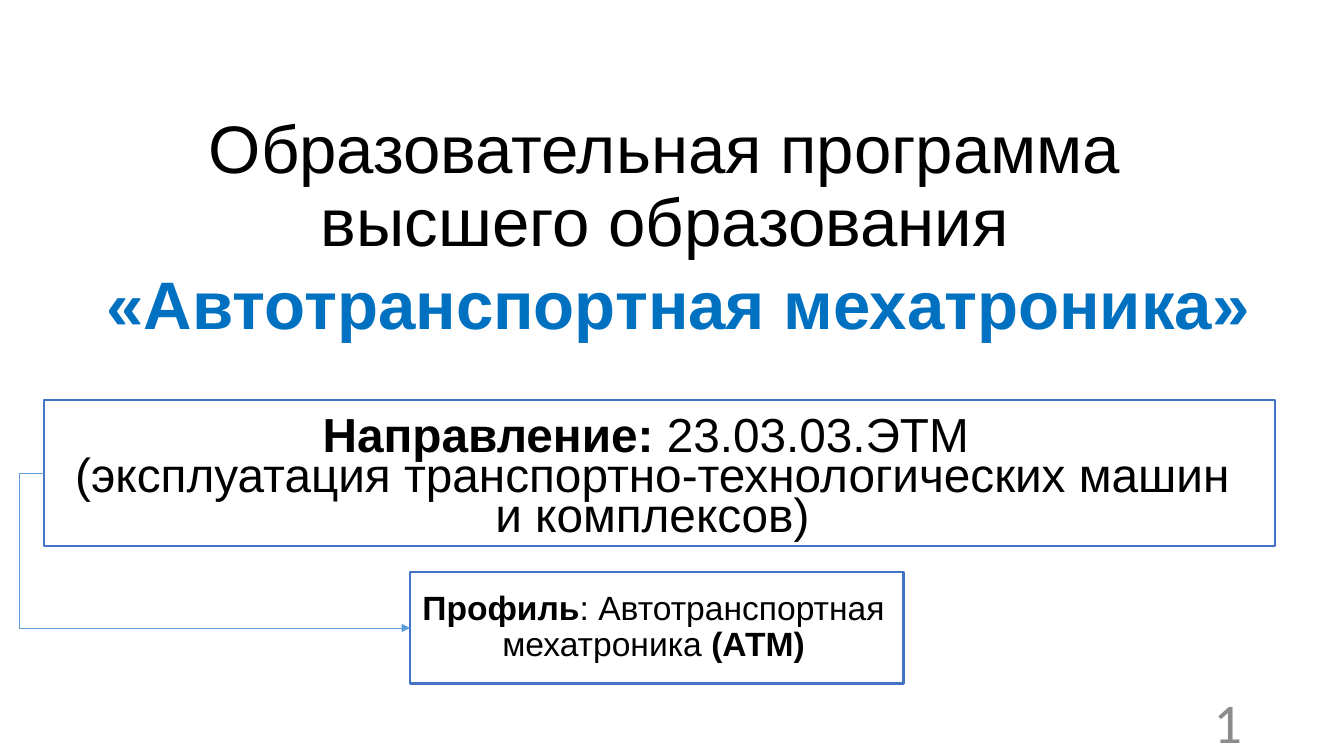
from lxml import etree
from pptx import Presentation
from pptx.dml.color import RGBColor
from pptx.enum.shapes import MSO_CONNECTOR, MSO_SHAPE
from pptx.enum.text import MSO_ANCHOR, PP_ALIGN
from pptx.oxml.ns import qn
from pptx.util import Pt

TOP, MIDDLE, BOTTOM = MSO_ANCHOR.TOP, MSO_ANCHOR.MIDDLE, MSO_ANCHOR.BOTTOM
CENTER, RIGHT = PP_ALIGN.CENTER, PP_ALIGN.RIGHT
RECTANGLE, ELBOW = MSO_SHAPE.RECTANGLE, MSO_CONNECTOR.ELBOW

THEME = {
    "black": "000000", "blue": "0070C0", "grey": "8C8C8C",
    "frame": "4472C4", "arrow": "5B9BD5",
    "heading": 48, "direction": 34.1, "profile": 24, "number": 40,
    "font": "Arial", "number_font": "Calibri",
}

TEXTS = [
    {"box": (77, 78, 1176, 188), "anchor": BOTTOM, "size": "heading",
     "format": {"line_spacing": 0.9},
     "paragraphs": [[("Образовательная программа\vвысшего образования", False)]]},
    {"box": (65, 266, 1227, 94), "anchor": TOP, "size": "heading", "color": "blue",
     "format": {"line_spacing": 0.9, "space_before": Pt(10)},
     "paragraphs": [[("«Автотранспортная мехатроника»", True)]]},
    {"box": (950, 701, 302, 40), "anchor": MIDDLE, "size": "number", "color": "grey",
     "font": "number_font", "format": {"alignment": RIGHT},
     "paragraphs": [[("1", False)]]},
    {"box": (51, 413, 1203, 135), "anchor": MIDDLE, "size": "direction",
     "format": {"line_spacing": 0.7},
     "paragraphs": [
         [("Направление:", True), (" 23.03.03.ЭТМ ", False)],
         [("(эксплуатация транспортно-технологических машин и комплексов)", False)]]},
    {"box": (402, 586, 503, 83), "anchor": MIDDLE, "size": "profile",
     "format": {"line_spacing": 0.9},
     "paragraphs": [[("Профиль", True), (": Автотранспортная мехатроника ", False),
                     ("(АТМ)", True)]]},
]

DIRECTION_FRAME = (44, 400, 1231, 146)
PROFILE_FRAME = (410, 572, 494, 112)
FRAMES = [(DIRECTION_FRAME, 1.75), (PROFILE_FRAME, 2)]
ARROW_OUTSET = 25
ARROW_WIDTH = 0.5
SCALE = 914400 / 100.8


def emu(*lengths):
    return [round(length * SCALE) for length in lengths]


def color(name):
    return RGBColor.from_string(THEME[name])


def add_text(slide, item):
    frame = slide.shapes.add_textbox(*emu(*item["box"])).text_frame
    frame.word_wrap = True
    frame.vertical_anchor = item["anchor"]
    for index, runs in enumerate(item["paragraphs"]):
        paragraph = frame.paragraphs[0] if index == 0 else frame.add_paragraph()
        for name, value in {"alignment": CENTER, **item["format"]}.items():
            setattr(paragraph, name, value)
        for part, (words, bold) in enumerate(runs):
            for line_index, line in enumerate(words.split("\v")):
                if line_index:
                    paragraph.add_line_break()
                run = paragraph.add_run()
                run.text = line
                font = {"name": THEME[item.get("font", "font")],
                        "size": Pt(THEME[item["size"]]), "bold": bold}
                for name, value in font.items():
                    setattr(run.font, name, value)
                run.font.color.rgb = color(item.get("color", "black"))


def add_frame(slide, box, width):
    frame = slide.shapes.add_shape(RECTANGLE, *emu(*box))
    frame.shadow.inherit = False
    frame.fill.background()
    frame.line.color.rgb = color("frame")
    frame.line.width = Pt(width)


def add_arrow(slide, source, target):
    start = (source[0], source[1] + source[3] / 2)
    end = (target[0], target[1] + target[3] / 2)
    arrow = slide.shapes.add_connector(ELBOW, *emu(*start, *end))
    arrow.line.color.rgb = color("arrow")
    arrow.line.width = Pt(ARROW_WIDTH)
    properties = arrow._element.spPr
    bend = round(-ARROW_OUTSET / (end[0] - start[0]) * 100000)
    adjustments = properties.find(qn("a:prstGeom")).get_or_add_avLst()
    etree.SubElement(adjustments, qn("a:gd"), name="adj1", fmla=f"val {bend}")
    etree.SubElement(properties.find(qn("a:ln")), qn("a:tailEnd"), type="triangle")
    etree.SubElement(properties, qn("a:effectLst"))


def main():
    deck = Presentation()
    deck.slide_width, deck.slide_height = emu(1344, 756)
    slide = deck.slides.add_slide(deck.slide_layouts[6])
    for item in TEXTS:
        add_text(slide, item)
    for box, width in FRAMES:
        add_frame(slide, box, width)
    add_arrow(slide, DIRECTION_FRAME, PROFILE_FRAME)
    deck.save("out.pptx")


if __name__ == "__main__":
    main()
